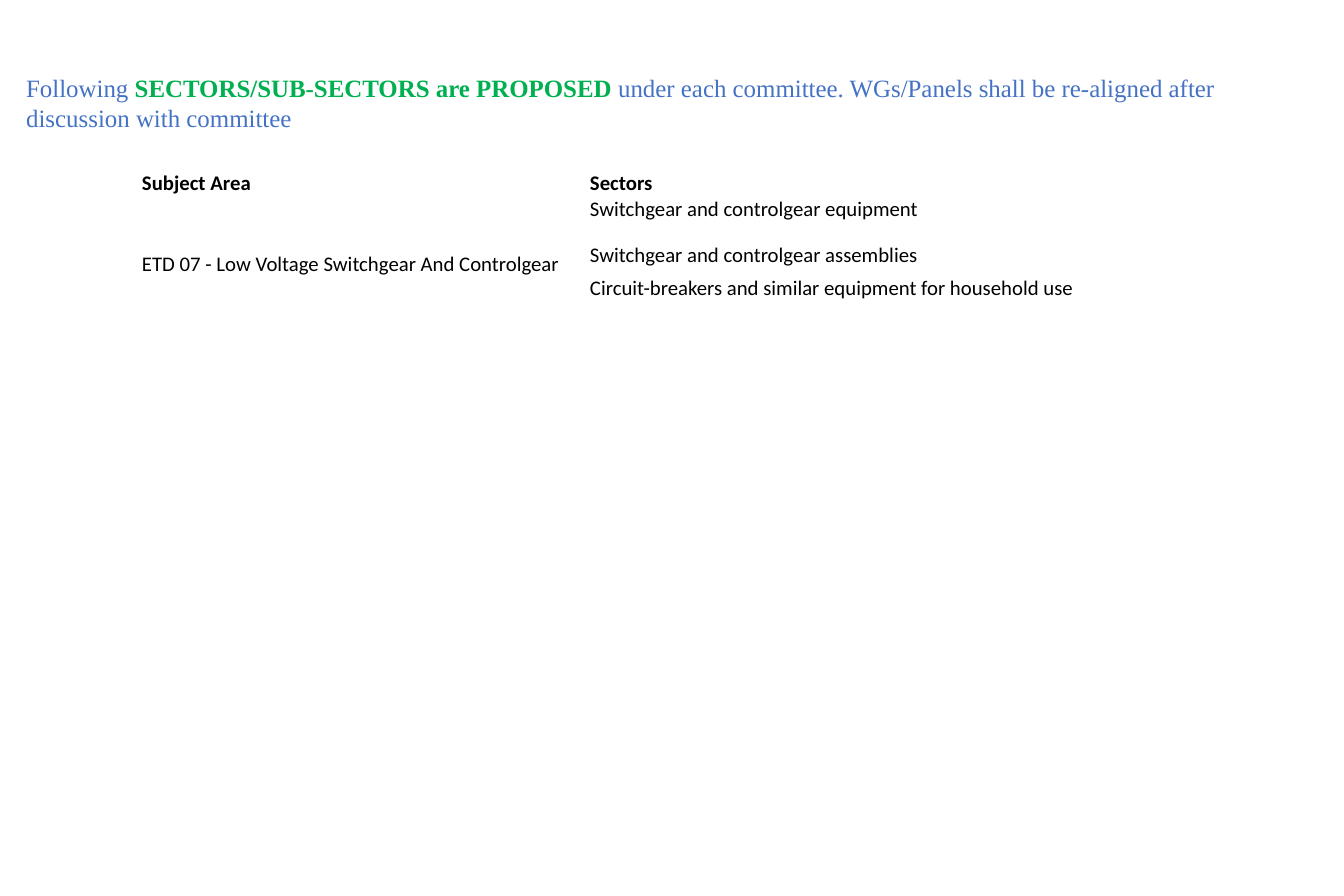
from dataclasses import dataclass

from pptx import Presentation
from pptx.dml.color import RGBColor
from pptx.enum.text import MSO_ANCHOR as Anchor, MSO_AUTO_SIZE as AutoSize
from pptx.table import Table
from pptx.text.text import _Paragraph as Paragraph
from pptx.util import Cm, Pt

BLUE, GREEN, BLACK = "4472C4", "00B050", "000000"


@dataclass(frozen=True)
class Phrase:
    text: str
    font: str
    size: int
    color: str
    bold: bool = False


@dataclass(frozen=True)
class Entry:
    row: int
    column: int
    text: str
    anchor: Anchor = Anchor.TOP
    bold: bool = False


INTRO = [
    Phrase("Following ", "Times New Roman", 24, BLUE),
    Phrase("SECTORS/SUB-SECTORS are PROPOSED ", "Times New Roman", 24, GREEN, True),
    Phrase("under each committee. WGs/Panels shall be re-aligned after "
           "discussion with committee", "Times New Roman", 24, BLUE),
]
ENTRIES = [
    Entry(0, 0, "Subject Area", Anchor.BOTTOM, True),
    Entry(0, 1, "Sectors", Anchor.BOTTOM, True),
    Entry(1, 0, "ETD 07 - Low Voltage Switchgear And Controlgear", Anchor.MIDDLE),
    Entry(1, 1, "Switchgear and controlgear equipment"),
    Entry(2, 1, "Switchgear and controlgear assemblies"),
    Entry(3, 1, "Circuit-breakers and similar equipment for household use"),
]
COLUMN_WIDTHS = [15.24, 19.99]
ROW_HEIGHTS = [1.12, 1.57, 1.12, 1.93]


def rgb(color: str) -> RGBColor:
    return RGBColor.from_string(color)


def add_phrase(paragraph: Paragraph, phrase: Phrase) -> None:
    run = paragraph.add_run()
    run.text = phrase.text
    run.font.name = phrase.font
    run.font.size = Pt(phrase.size)
    run.font.bold = phrase.bold
    run.font.color.rgb = rgb(phrase.color)


def fill_entry(sectors: Table, entry: Entry) -> None:
    cell = sectors.cell(entry.row, entry.column)
    cell.vertical_anchor = entry.anchor
    cell.margin_left = cell.margin_top = cell.margin_right = Cm(0.03)
    cell.margin_bottom = Cm(0)
    add_phrase(cell.text_frame.paragraphs[0],
               Phrase(entry.text, "Calibri", 20, BLACK, entry.bold))


def main() -> None:
    deck = Presentation()
    deck.slide_width, deck.slide_height = Cm(45.72), Cm(30.48)
    slide = deck.slides.add_slide(deck.slide_layouts[6])

    intro = slide.shapes.add_textbox(Cm(0.64), Cm(2.36), Cm(43.54), Cm(2.31)).text_frame
    intro.word_wrap = True
    intro.auto_size = AutoSize.SHAPE_TO_FIT_TEXT
    for phrase in INTRO:
        add_phrase(intro.paragraphs[0], phrase)

    sectors = slide.shapes.add_table(
        len(ROW_HEIGHTS), len(COLUMN_WIDTHS), Cm(4.8), Cm(5.54),
        Cm(sum(COLUMN_WIDTHS)), Cm(sum(ROW_HEIGHTS))).table
    sectors.first_row = sectors.horz_banding = False
    for column, width in zip(sectors.columns, COLUMN_WIDTHS):
        column.width = Cm(width)
    for row, height in zip(sectors.rows, ROW_HEIGHTS):
        row.height = Cm(height)
    for cell in sectors.iter_cells():
        cell.fill.background()
    sectors.cell(1, 0).merge(sectors.cell(3, 0))
    for entry in ENTRIES:
        fill_entry(sectors, entry)

    deck.save("out.pptx")


if __name__ == "__main__":
    main()
